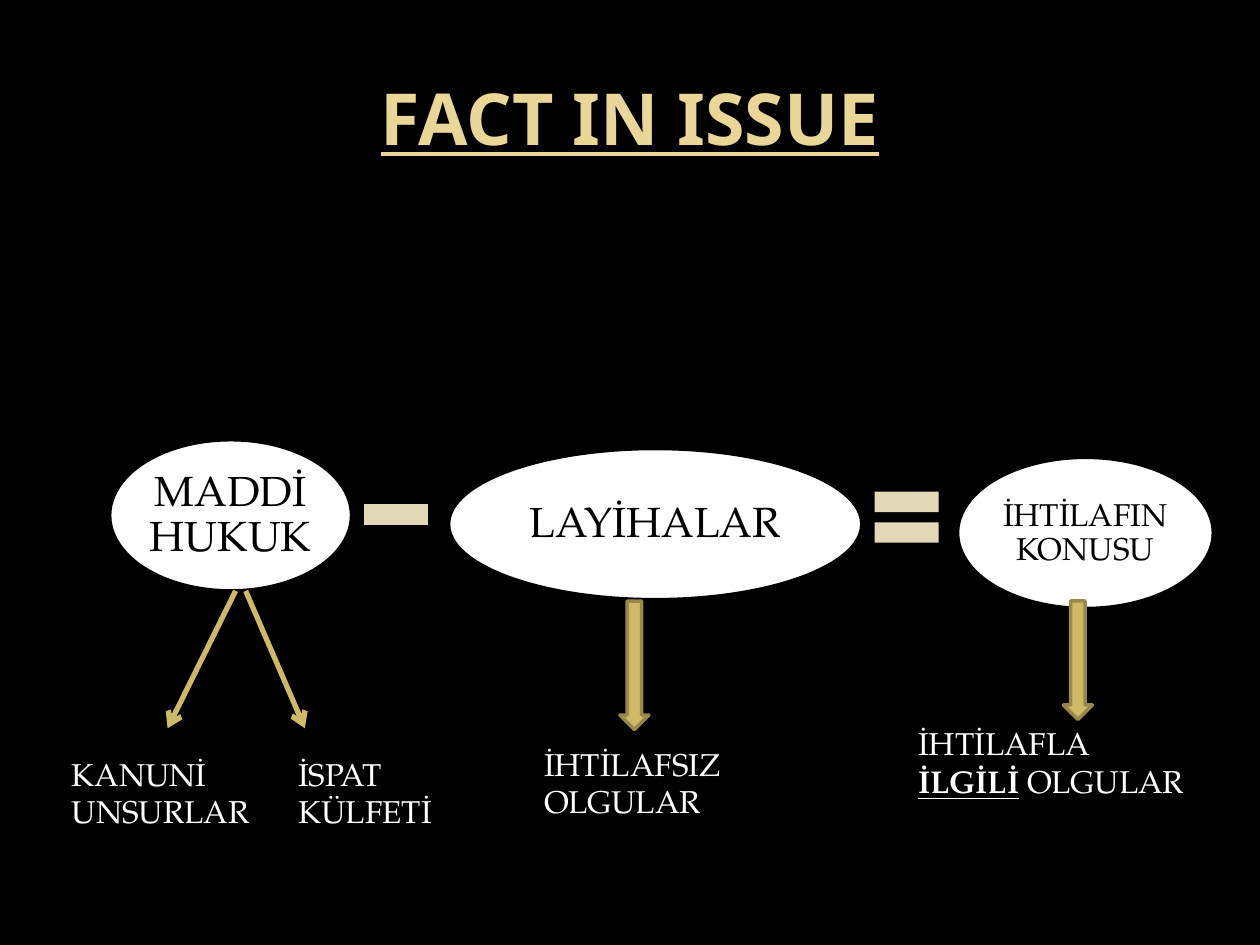
"""Build the FACT IN ISSUE slide: an equation of ellipses with arrows to notes."""
from lxml.etree import SubElement
from pptx import Presentation
from pptx.dml.color import RGBColor as Rgb
from pptx.enum.shapes import MSO_CONNECTOR as Link, MSO_SHAPE as Kind
from pptx.enum.text import MSO_ANCHOR as Anchor, PP_ALIGN as Align
from pptx.oxml.ns import qn
from pptx.util import Inches, Pt

HUES = {"black": "000000", "white": "FFFFFF", "title": "EAD696",
        "sign": "E3D9B8", "gold": "CEB966", "edge": "98894B"}
SERIF = "TeX Gyre Pagella"

TITLE = ("FACT IN ISSUE", (0.5, 0.3, 9, 1.25))
OVALS = [("MADDİ HUKUK", 24, (0.87, 3.49, 1.92, 1.2)),
         ("LAYİHALAR", 24, (3.56, 3.56, 3.28, 1.2)),
         ("İHTİLAFIN KONUSU", 18, (7.6, 3.63, 2.03, 1.2))]
SIGNS = [(Kind.MATH_MINUS, (2.8, 3.74, 0.69, 0.69)),
         (Kind.MATH_EQUAL, (6.85, 3.76, 0.69, 0.69))]
NOTES = [(["KANUNİ UNSURLAR"], (0.47, 5.94, 2.19, 0.71)),
         (["İSPAT KÜLFETİ"], (2.27, 5.94, 1.41, 0.71)),
         (["İHTİLAFSIZ OLGULAR"], (4.22, 5.86, 2.66, 0.71)),
         (["İHTİLAFLA ", ("İLGİLİ",), " OLGULAR"], (7.19, 5.7, 2.42, 0.71))]
LINES = [(1.87, 4.69, 1.33, 5.78), (1.95, 4.69, 2.42, 5.78)]
DROPS = [(4.92, 4.77, 0.23, 1.02), (8.44, 4.77, 0.23, 0.94)]


def tint(name):
    return Rgb.from_string(HUES[name])


def write(shape, runs, size=18, hue="white", font=SERIF, strong=False,
          align=Align.LEFT, anchor=Anchor.TOP, inset=None, space=None):
    frame = shape.text_frame
    frame.word_wrap = True
    frame.vertical_anchor = anchor
    if inset is not None:
        frame.margin_left = frame.margin_right = Inches(inset)
        frame.margin_top = frame.margin_bottom = Inches(inset)
    para = frame.paragraphs[0]
    para.alignment = align
    para.line_spacing = space
    for part in runs:
        mark = strong or isinstance(part, tuple)
        run = para.add_run()
        run.text = part[0] if isinstance(part, tuple) else part
        run.font.size, run.font.name = Pt(size), font
        run.font.bold = run.font.underline = mark
        run.font.color.rgb = tint(hue)


def draw(shapes, kind, box, fill, edge=None):
    shape = shapes.add_shape(kind, *map(Inches, box))
    shape.shadow.inherit = False
    shape.fill.solid()
    shape.fill.fore_color.rgb = tint(fill)
    if edge:
        shape.line.color.rgb = tint(edge)
        shape.line.width = Pt(2)
    else:
        shape.line.fill.background()
    return shape


def point(shapes, ends):
    line = shapes.add_connector(Link.STRAIGHT, *map(Inches, ends))
    line.line.color.rgb = tint("gold")
    line.line.width = Pt(3)
    SubElement(line.line._get_or_add_ln(), qn("a:tailEnd"), type="arrow")
    SubElement(line._element.spPr, qn("a:effectLst"))


def main():
    deck = Presentation()
    deck.slide_width, deck.slide_height = Inches(10), Inches(7.5)
    slide = deck.slides.add_slide(deck.slide_layouts[6])
    slide.background.fill.solid()
    slide.background.fill.fore_color.rgb = tint("black")
    shapes = slide.shapes

    text, box = TITLE
    write(shapes.add_textbox(*map(Inches, box)), [text], size=41, hue="title",
          font="Noto Sans", strong=True, align=Align.CENTER, anchor=Anchor.MIDDLE)
    for text, size, box in OVALS:
        oval = draw(shapes, Kind.OVAL, box, "white", "black")
        write(oval, [text], size=size, hue="black", align=Align.CENTER,
              anchor=Anchor.MIDDLE, inset=0.03, space=0.9)
    for kind, box in SIGNS:
        draw(shapes, kind, box, "sign")
    for ends in LINES:
        point(shapes, ends)
    for box in DROPS:
        draw(shapes, Kind.DOWN_ARROW, box, "gold", "edge")
    for runs, box in NOTES:
        write(shapes.add_textbox(*map(Inches, box)), runs)
    deck.save("out.pptx")


if __name__ == "__main__":
    main()
